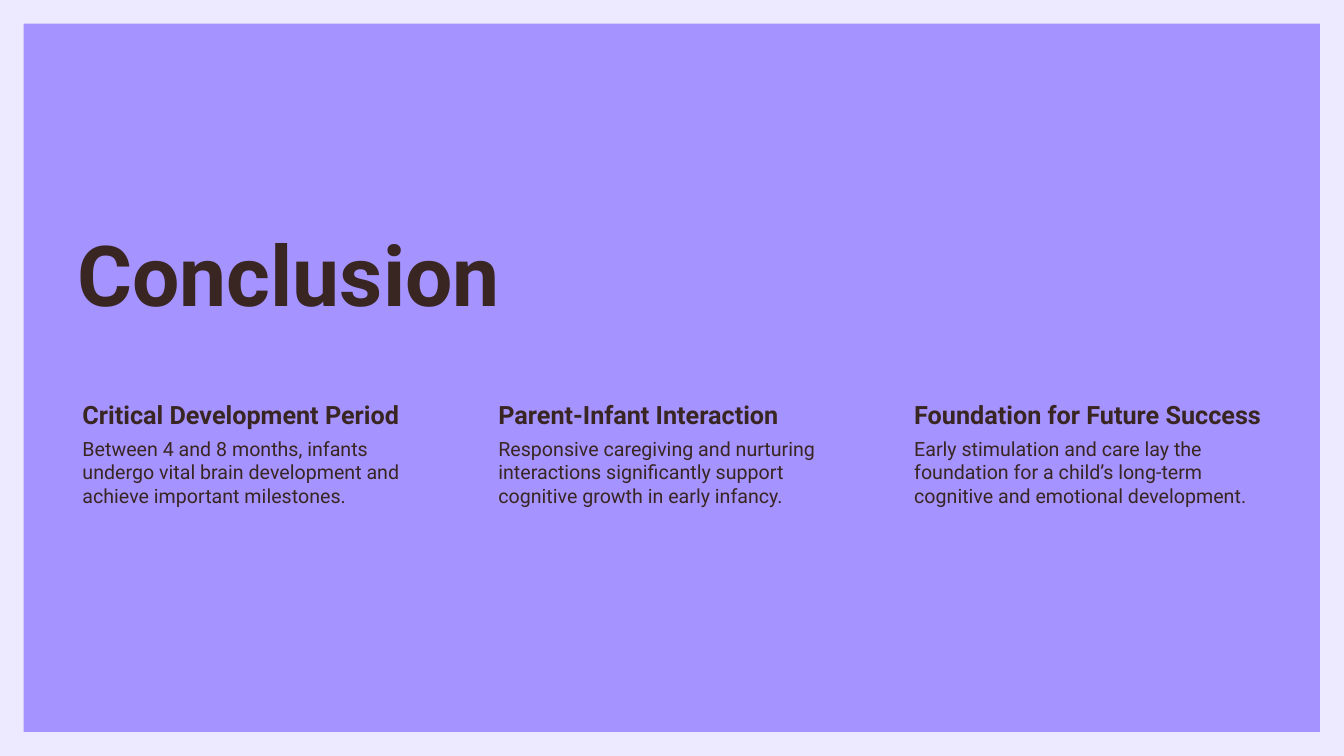
from pptx import Presentation, util as u
from pptx.dml.color import RGBColor
from pptx.enum import shapes, text

TITLE = "Conclusion"
POINTS = [
    ("Critical Development Period",
     "Between 4 and 8 months, infants undergo vital brain development "
     "and achieve important milestones."),
    ("Parent-Infant Interaction",
     "Responsive caregiving and nurturing interactions significantly "
     "support cognitive growth in early infancy."),
    ("Foundation for Future Success",
     "Early stimulation and care lay the foundation for a child’s "
     "long-term cognitive and emotional development."),
]

PURPLE = RGBColor(0xA5, 0x93, 0xFF)
LAVENDER = RGBColor(0xED, 0xE9, 0xFF)
BROWN = RGBColor(0x39, 0x26, 0x23)
FONT = "Roboto"

# Lengths in centimetres
PAGE_WIDTH, PAGE_HEIGHT = 33.87, 19.05
BORDER = 0.6
LEFT = 1.7
COLUMN_WIDTH, COLUMN_STEP = 9.53, 10.48
HEADING_TOP, HEADING_HEIGHT = 9.98, 0.95
BODY_TOP, BODY_HEIGHT = 10.95, 6.5
TITLE_INSETS = (0.25, 0.13, 0.25, 0.13)
HEADING_INSETS = (0.38, 0.08, 0.08, 0.08)
BODY_INSETS = (0.38, 0.05, 0.05, 0.05)


def add_text(page, words, place, insets, size, bold=False,
             anchor=text.MSO_ANCHOR.TOP, line_spacing=1.0):
    box = page.shapes.add_textbox(*(u.Cm(length) for length in place))
    frame = box.text_frame
    frame.word_wrap = True
    frame.vertical_anchor = anchor
    (frame.margin_left, frame.margin_top,
     frame.margin_right, frame.margin_bottom) = (u.Cm(i) for i in insets)
    para = frame.paragraphs[0]
    para.line_spacing = line_spacing
    span = para.add_run()
    span.text = words
    span.font.name = FONT
    span.font.size = u.Pt(size)
    span.font.bold = bold
    span.font.color.rgb = BROWN


def add_border(page):
    border = page.shapes.add_shape(shapes.MSO_SHAPE.FRAME, 0, 0,
                                   u.Cm(PAGE_WIDTH), u.Cm(PAGE_HEIGHT))
    border.adjustments[0] = BORDER / PAGE_HEIGHT
    border.shadow.inherit = False
    border.fill.solid()
    border.fill.fore_color.rgb = LAVENDER
    border.line.fill.background()


def main():
    deck = Presentation()
    deck.slide_width, deck.slide_height = u.Cm(PAGE_WIDTH), u.Cm(PAGE_HEIGHT)
    page = deck.slides.add_slide(deck.slide_layouts[6])
    page.background.fill.solid()
    page.background.fill.fore_color.rgb = PURPLE

    add_border(page)
    add_text(page, TITLE, (LEFT, 5.13, 20.4, 3.15), TITLE_INSETS, 60,
             bold=True, anchor=text.MSO_ANCHOR.BOTTOM, line_spacing=0.85)
    for column, (heading, body) in enumerate(POINTS):
        left = LEFT + column * COLUMN_STEP
        add_text(page, heading, (left, HEADING_TOP, COLUMN_WIDTH, HEADING_HEIGHT),
                 HEADING_INSETS, 18, bold=True)
        add_text(page, body, (left, BODY_TOP, COLUMN_WIDTH, BODY_HEIGHT),
                 BODY_INSETS, 14)

    deck.save("out.pptx")


if __name__ == "__main__":
    main()
